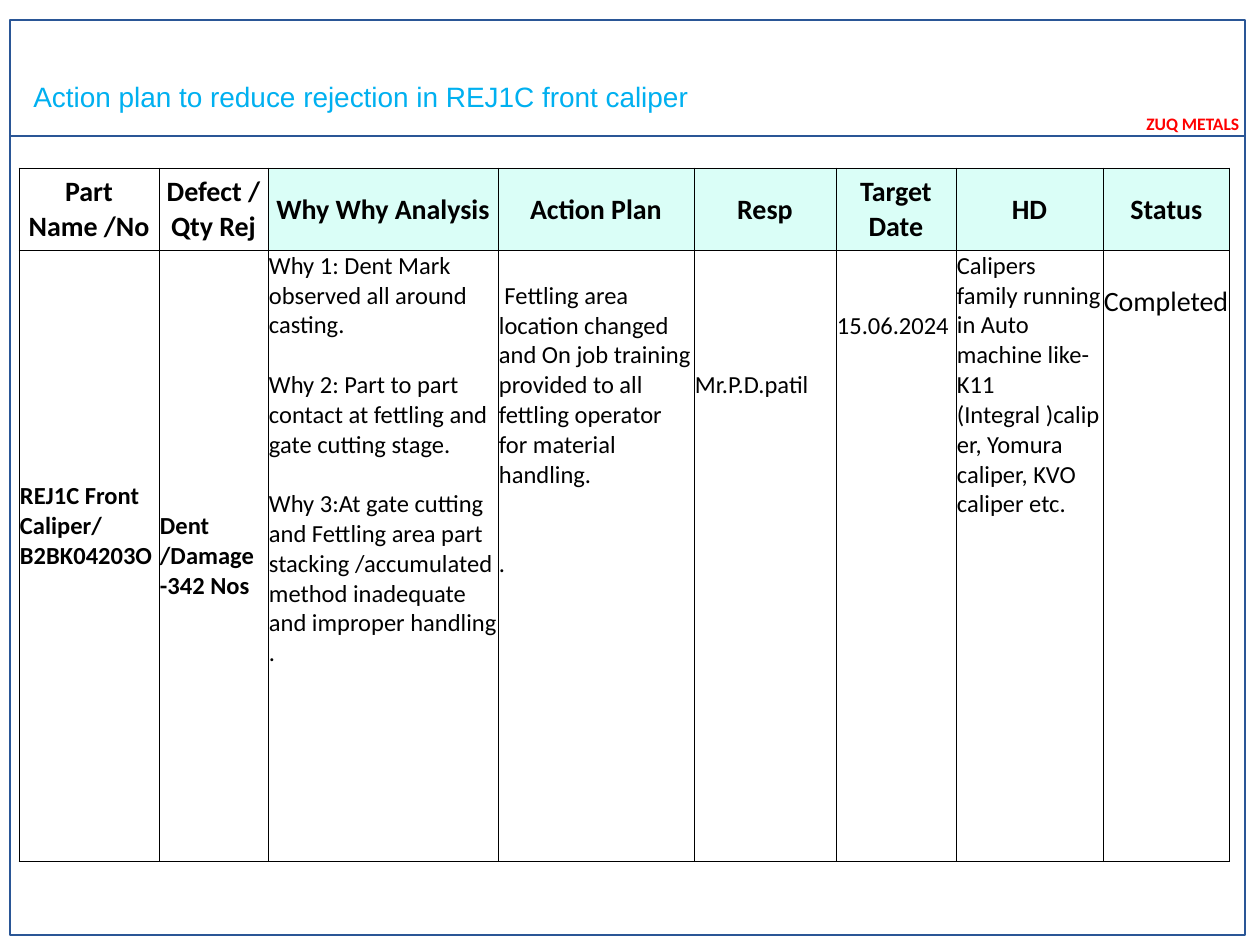
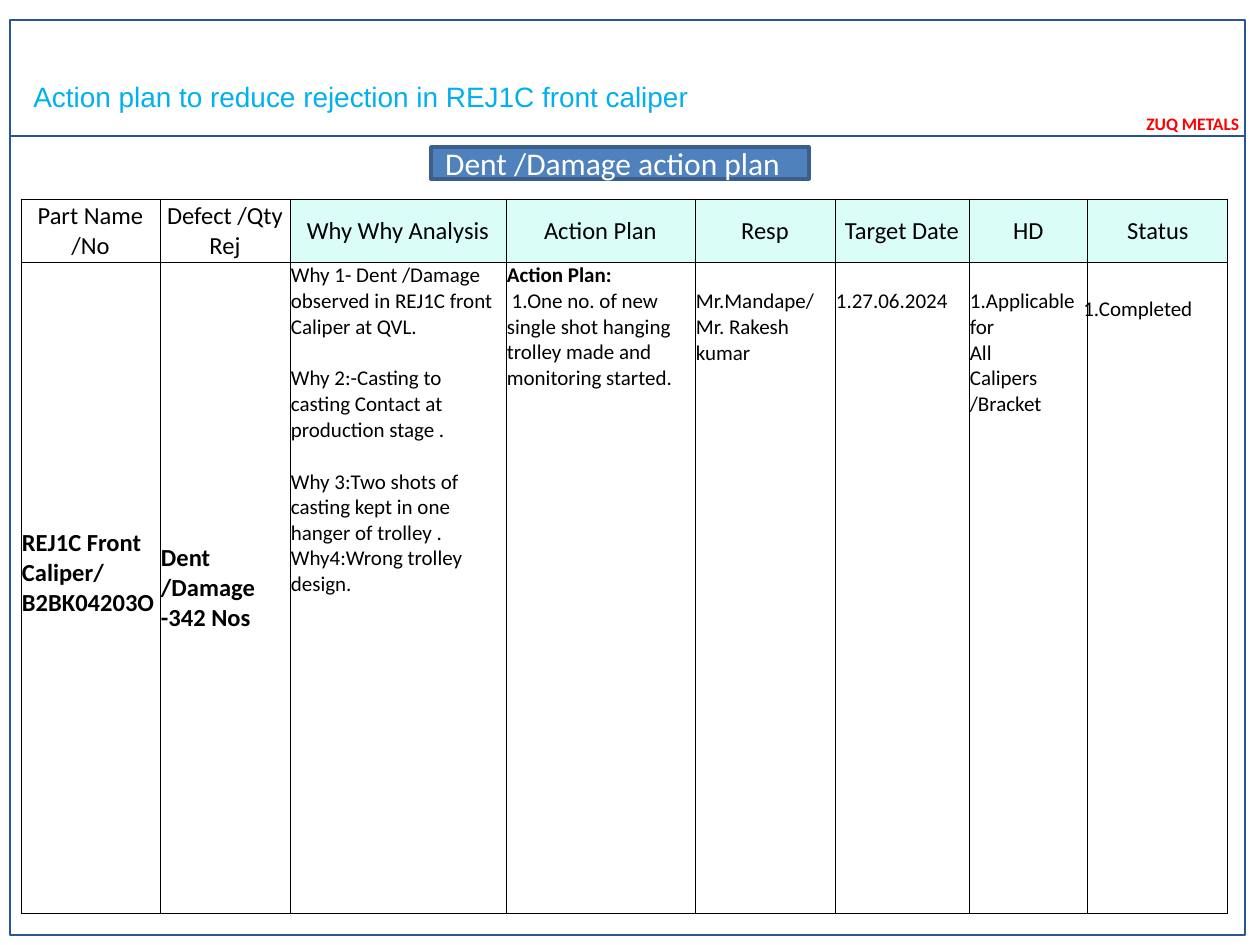
from dataclasses import dataclass

from lxml.etree import SubElement
from pptx import Presentation
from pptx.dml.color import RGBColor
from pptx.enum.shapes import MSO_CONNECTOR, MSO_SHAPE
from pptx.enum.text import MSO_ANCHOR, PP_ALIGN
from pptx.oxml.ns import qn
from pptx.util import Pt


@dataclass(frozen=True)
class Theme:
    frame: str = "2A5696"
    company: str = "FF0000"
    title: str = "00B0F0"
    ink: str = "000000"
    white: str = "FFFFFF"
    header_fill: str = "DAFEF7"
    banner_fill: str = "4F81BD"
    banner_line: str = "3A5F8C"
    body_font: str = "Calibri"
    title_font: str = "Arial"
    company_size: int = 10
    small_size: int = 12
    body_size: int = 14
    large_size: int = 16
    banner_size: int = 18


THEME = Theme()
EMU_PER_PX = 914400 / 126
PAGE_WIDTH, PAGE_HEIGHT = 1260, 945
HEADINGS = ["Part Name /No", "Defect /Qty Rej", "Why Why Analysis", "Action Plan",
            "Resp", "Target Date", "HD", "Status"]
PLAIN_HEADINGS = 2
PART = "REJ1C Front Caliper/ B2BK04203O"
DEFECT = "Dent /Damage -342 Nos"


@dataclass(frozen=True)
class Line:
    """One paragraph; gap is the space before it in points."""
    text: str
    gap: int = 0
    bold: bool = False


@dataclass(frozen=True)
class Entry:
    """One body cell; top and bottom are insets in px."""
    lines: tuple = ()
    size: int = THEME.body_size
    top: int = 1
    bottom: int = 0
    middle: bool = False


def px(length):
    return round(length * EMU_PER_PX)


def rgb(colour):
    return RGBColor.from_string(colour)


def add_span(para, text, size, colour=THEME.ink, bold=False, font=THEME.body_font):
    for index, piece in enumerate(text.split("\n")):
        if index:
            para.add_line_break()
        span = para.add_run()
        span.text = piece
        span.font.name, span.font.size, span.font.bold = font, Pt(size), bold
        span.font.color.rgb = rgb(colour)


def add_label(page, box, text, size, wrap=True, **style):
    label = page.shapes.add_textbox(*map(px, box))
    label.text_frame.word_wrap = wrap
    add_span(label.text_frame.paragraphs[0], text, size, **style)


def add_rectangle(page, box, line, width, fill=None):
    rectangle = page.shapes.add_shape(MSO_SHAPE.RECTANGLE, *map(px, box))
    rectangle.shadow.inherit = False
    rectangle.line.color.rgb = rgb(line)
    rectangle.line.width = Pt(width)
    if fill:
        rectangle.fill.solid()
        rectangle.fill.fore_color.rgb = rgb(fill)
    else:
        rectangle.fill.background()
    return rectangle


def add_page_frame(page, box):
    """Border, rule under the title, company name and title."""
    left, top, width, height = box
    rule = page.shapes.add_connector(MSO_CONNECTOR.STRAIGHT, px(left), px(top + 116),
                                     px(left + width), px(top + 116))
    rule.line.color.rgb = rgb(THEME.frame)
    rule.line.width = Pt(1.5)
    SubElement(rule._element.spPr, qn("a:effectLst"))
    add_rectangle(page, box, THEME.frame, 1.5)
    add_label(page, (left + 1124, top + 87, 126, 32), "ZUQ METALS",
              THEME.company_size, colour=THEME.company, bold=True)
    add_label(page, (left + 11, top + 53, 1050, 47),
              "Action plan to reduce rejection in REJ1C front caliper",
              THEME.large_size, colour=THEME.title, font=THEME.title_font)


def add_banner(page, box, text):
    banner = add_rectangle(page, box, THEME.banner_line, 2, THEME.banner_fill)
    frame = banner.text_frame
    frame.word_wrap = True
    frame.vertical_anchor = MSO_ANCHOR.MIDDLE
    frame.margin_right = px(27)
    frame.paragraphs[0].alignment = PP_ALIGN.CENTER
    add_span(frame.paragraphs[0], text, THEME.banner_size, THEME.white)


def style_cell(cell, fill=None, top=1, bottom=0, middle=False):
    properties = cell._tc.get_or_add_tcPr()
    for side in ("lnL", "lnR", "lnT", "lnB"):
        border = SubElement(properties, qn(f"a:{side}"), w=str(Pt(0.5)))
        paint = SubElement(border, qn("a:solidFill"))
        SubElement(paint, qn("a:srgbClr"), val=THEME.ink)
    if fill:
        cell.fill.solid()
        cell.fill.fore_color.rgb = rgb(fill)
    else:
        cell.fill.background()
    cell.margin_left = cell.margin_right = px(1)
    cell.margin_top, cell.margin_bottom = px(top), px(bottom)
    cell.vertical_anchor = MSO_ANCHOR.MIDDLE if middle else MSO_ANCHOR.TOP


def fill_entry(cell, entry):
    style_cell(cell, top=entry.top, bottom=entry.bottom, middle=entry.middle)
    frame = cell.text_frame
    for index, line in enumerate(entry.lines):
        para = frame.add_paragraph() if index else frame.paragraphs[0]
        if line.gap:
            para.space_before = Pt(line.gap)
        add_span(para, line.text, entry.size, bold=line.bold)


def add_plan_table(page, corner, widths, heights, entries, heading_size, heading_bold):
    left, top = corner
    table = page.shapes.add_table(2, len(widths), px(left), px(top),
                                  px(sum(widths)), px(sum(heights))).table
    table.first_row = table.horz_banding = False
    for row, height in zip(table.rows, heights):
        row.height = px(height)
    for index, (width, heading, entry) in enumerate(zip(widths, HEADINGS, entries)):
        table.columns[index].width = px(width)
        cell = table.cell(0, index)
        style_cell(cell, THEME.header_fill if index >= PLAIN_HEADINGS else None, middle=True)
        para = cell.text_frame.paragraphs[0]
        para.alignment = PP_ALIGN.CENTER
        add_span(para, heading, heading_size, bold=heading_bold)
        fill_entry(table.cell(1, index), entry)


def part_entries(part_bottom):
    """The two bold cells that open each body row."""
    return [Entry((Line(PART, bold=True),), bottom=part_bottom, middle=True),
            Entry((Line(DEFECT, bold=True),), middle=True)]


def add_page(deck):
    page = deck.slides.add_slide(deck.slide_layouts[6])
    add_page_frame(page, (10, 20, 1235, 915))
    return page


def build_handling_page(deck):
    page = add_page(deck)
    entries = part_entries(60) + [
        Entry((Line("Why 1: Dent Mark observed all around casting."),
               Line("Why 2: Part to part contact at fettling and gate cutting stage.", 17),
               Line("Why 3:At gate cutting and Fettling area part stacking /accumulated "
                    "method inadequate and improper handling .", 17))),
        Entry((Line(" Fettling area location changed and On job training provided to all "
                    "fettling operator for material handling."),
               Line(".", 34)), top=31),
        Entry((Line("Mr.P.D.patil"),), top=120),
        Entry((Line("15.06.2024"),), top=61),
        Entry((Line("Calipers family running in Auto machine like-K11 (Integral )caliper, "
                    "Yomura caliper, KVO caliper etc."),)),
        Entry((Line("Completed"),), size=THEME.large_size, top=35),
    ]
    add_plan_table(page, (19, 168), (140, 109, 230, 196, 142, 120, 147, 127), (82, 611),
                   entries, THEME.large_size, True)


def build_trolley_page(deck):
    page = add_page(deck)
    small = THEME.small_size
    entries = part_entries(30) + [
        Entry((Line("Why 1- Dent /Damage observed in REJ1C front Caliper at QVL."),
               Line("Why 2:-Casting to casting Contact at production stage .", 15),
               Line("Why 3:Two shots of casting kept in one hanger of trolley .", 15),
               Line("Why4:Wrong trolley design.")), small),
        Entry((Line("Action Plan:", bold=True),
               Line(" 1.One no. of new single shot hanging trolley made and "
                    "monitoring started.")), small),
        Entry((Line("Mr.Mandape/ Mr. Rakesh kumar"),), small, top=27),
        Entry((Line("1.27.06.2024"),), small, top=27),
        Entry((Line("1.Applicable"), Line("for"), Line("All\nCalipers\n/Bracket")),
              small, top=27),
        Entry(),
    ]
    add_plan_table(page, (21, 199), (139, 130, 216, 189, 140, 134, 119, 140), (63, 651),
                   entries, THEME.body_size, False)
    add_label(page, (1071, 289, 136, 38), "1.Completed", small, wrap=False)
    add_banner(page, (431, 147, 378, 32), "Dent /Damage action plan")


def main():
    deck = Presentation()
    deck.slide_width, deck.slide_height = px(PAGE_WIDTH), px(PAGE_HEIGHT)
    build_handling_page(deck)
    build_trolley_page(deck)
    deck.save("out.pptx")


if __name__ == "__main__":
    main()
